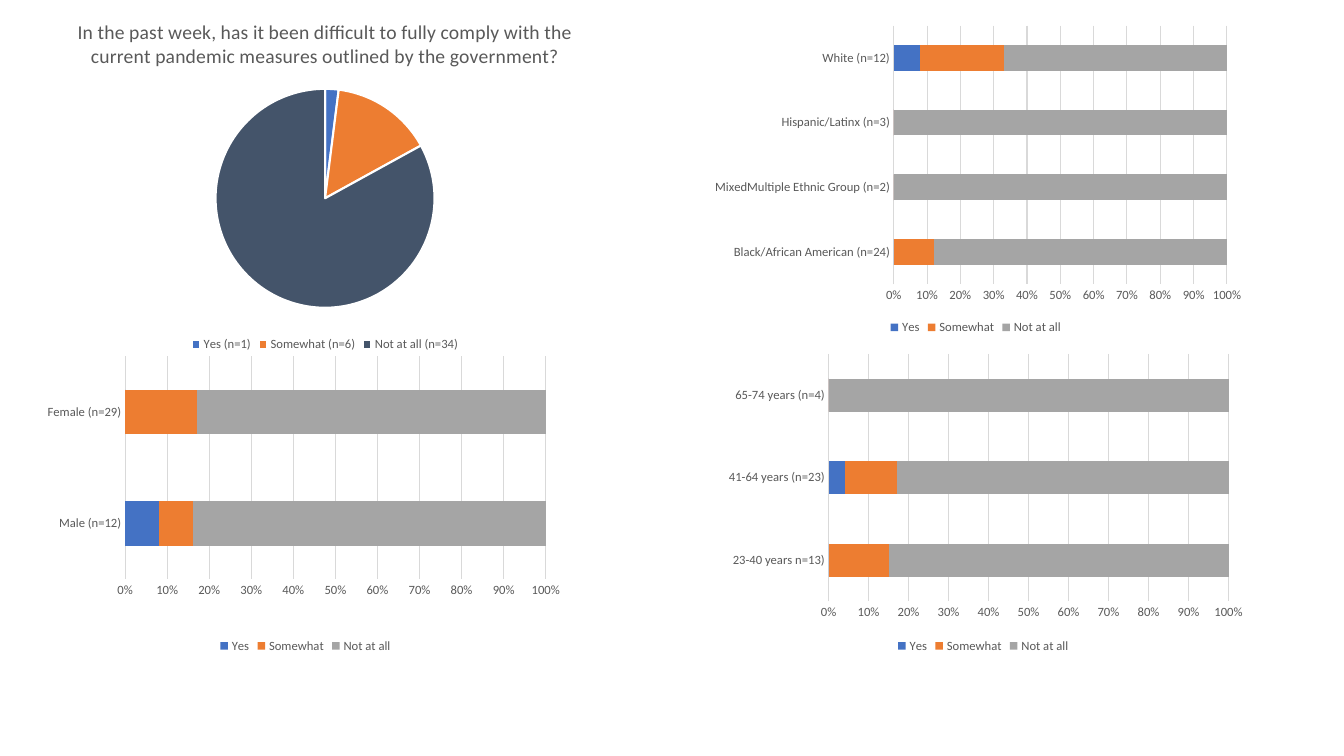
from dataclasses import dataclass

from lxml import etree
from pptx import Presentation
from pptx import util as u
from pptx.chart.chart import Chart
from pptx.chart.data import CategoryChartData
from pptx.dml.color import RGBColor
from pptx.enum import chart as kinds
from pptx.oxml import ns

Box = tuple[float, float, float, float]

BLUE, ORANGE, GREY, SLATE = "4472C4", "ED7D31", "A5A5A5", "44546A"
TEXT, RULE, WHITE = "595959", "D9D9D9", "FFFFFF"
QUESTION = (
    "In the past week, has it been difficult to fully comply with the "
    "current pandemic measures outlined by the government?"
)
ANSWERS = (("Yes", BLUE), ("Somewhat", ORANGE), ("Not at all", GREY))
SMALL_TEXT = {"name": "Calibri", "size": u.Pt(9), "bold": False}
TITLE_TEXT = SMALL_TEXT | {"size": u.Pt(14)}


@dataclass(frozen=True)
class Breakdown:
    """Answers in percent per group; plot is a fraction of the chart area."""

    box: Box
    plot: Box
    groups: dict[str, tuple[float, ...]]


OVERALL_BOX: Box = (-12.24, 1.44, 488.88, 252.72)
OVERALL_PLOT: Box = (0.34, 0.24, 0.32, 0.63)
OVERALL = (
    ("Yes (n=1)", 2, BLUE),
    ("Somewhat (n=6)", 15, ORANGE),
    ("Not at all (n=34)", 83, SLATE),
)
BREAKDOWNS = (
    Breakdown(
        (23.04, 254.16, 390.24, 215.28),
        (0.17, 0, 0.77, 0.74),
        {"Male (n=12)": (8, 8, 83), "Female (n=29)": (0, 17, 83)},
    ),
    Breakdown(
        (511.92, 248.4, 380.88, 221.04),
        (0.21, 0.02, 0.75, 0.8),
        {
            "23-40 years n=13)": (0, 15, 85),
            "41-64 years (n=23)": (4, 13, 83),
            "65-74 years (n=4)": (0, 0, 100),
        },
    ),
    Breakdown(
        (501.84, 13.68, 390.24, 228.24),
        (0.35, 0.02, 0.61, 0.81),
        {
            "Black/African American (n=24)": (0, 12, 88),
            "MixedMultiple Ethnic Group (n=2)": (0, 0, 100),
            "Hispanic/Latinx (n=3)": (0, 0, 100),
            "White (n=12)": (8, 25, 67),
        },
    ),
)


def color(value: str) -> RGBColor:
    return RGBColor.from_string(value)


def format_font(font, values: dict) -> None:
    for name, value in values.items():
        setattr(font, name, value)
    font.color.rgb = color(TEXT)


def paint(target, value: str) -> None:
    target.format.fill.solid()
    target.format.fill.fore_color.rgb = color(value)


def draw_line(line, value: str, width: float) -> None:
    line.color.rgb = color(value)
    line.width = u.Pt(width)


def place_plot(chart: Chart, plot: Box) -> None:
    """Fix the inner plot area, which python-pptx leaves automatic."""
    area = chart.element.find(".//" + ns.qn("c:plotArea"))
    for old in area.findall(ns.qn("c:layout")):
        area.remove(old)
    layout = etree.Element(ns.qn("c:layout"))
    area.insert(0, layout)
    manual = etree.SubElement(layout, ns.qn("c:manualLayout"))
    settings = {"layoutTarget": "inner", "xMode": "edge", "yMode": "edge"}
    settings |= dict(zip("xywh", map(str, plot)))
    for name, value in settings.items():
        etree.SubElement(manual, ns.qn("c:" + name)).set("val", value)


def add_chart(slide, kind, box: Box, plot: Box, data: CategoryChartData) -> Chart:
    chart = slide.shapes.add_chart(kind, *map(u.Pt, box), data).chart
    format_font(chart.font, SMALL_TEXT)
    chart.has_title = False
    chart.has_legend = True
    chart.legend.position = kinds.XL_LEGEND_POSITION.BOTTOM
    chart.legend.include_in_layout = False
    format_font(chart.legend.font, SMALL_TEXT)
    place_plot(chart, plot)
    return chart


def add_overall(slide) -> None:
    labels, values, colors = zip(*OVERALL)
    data = CategoryChartData()
    data.categories = labels
    data.add_series("Series 1", values)
    chart = add_chart(slide, kinds.XL_CHART_TYPE.PIE, OVERALL_BOX, OVERALL_PLOT, data)
    chart.has_title = True
    chart.chart_title.include_in_layout = False
    paragraph = chart.chart_title.text_frame.paragraphs[0]
    paragraph.text = QUESTION
    format_font(paragraph.runs[0].font, TITLE_TEXT)
    for index, value in enumerate(colors):
        point = chart.plots[0].series[0].points[index]
        paint(point, value)
        draw_line(point.format.line, WHITE, 1.5)


def add_breakdown(slide, breakdown: Breakdown) -> None:
    data = CategoryChartData()
    data.categories = list(breakdown.groups)
    for (answer, _), values in zip(ANSWERS, zip(*breakdown.groups.values())):
        data.add_series(answer, values)
    kind = kinds.XL_CHART_TYPE.BAR_STACKED_100
    chart = add_chart(slide, kind, breakdown.box, breakdown.plot, data)
    bars = chart.plots[0]
    bars.vary_by_categories = False
    bars.gap_width, bars.overlap = 150, 100
    for series, (_, value) in zip(bars.series, ANSWERS):
        paint(series, value)
    for axis in (chart.category_axis, chart.value_axis):
        axis.major_tick_mark = axis.minor_tick_mark = kinds.XL_TICK_MARK.NONE
        format_font(axis.tick_labels.font, SMALL_TEXT)
    draw_line(chart.category_axis.format.line, RULE, 0.75)
    percent = chart.value_axis
    percent.format.line.fill.background()
    percent.has_major_gridlines = True
    draw_line(percent.major_gridlines.format.line, RULE, 0.75)
    percent.tick_labels.number_format = "0%"
    percent.tick_labels.number_format_is_linked = False


def main() -> None:
    presentation = Presentation()
    presentation.slide_width, presentation.slide_height = u.Pt(960), u.Pt(540)
    slide = presentation.slides.add_slide(presentation.slide_layouts[6])
    add_overall(slide)
    for breakdown in BREAKDOWNS:
        add_breakdown(slide, breakdown)
    presentation.save("out.pptx")


if __name__ == "__main__":
    main()
